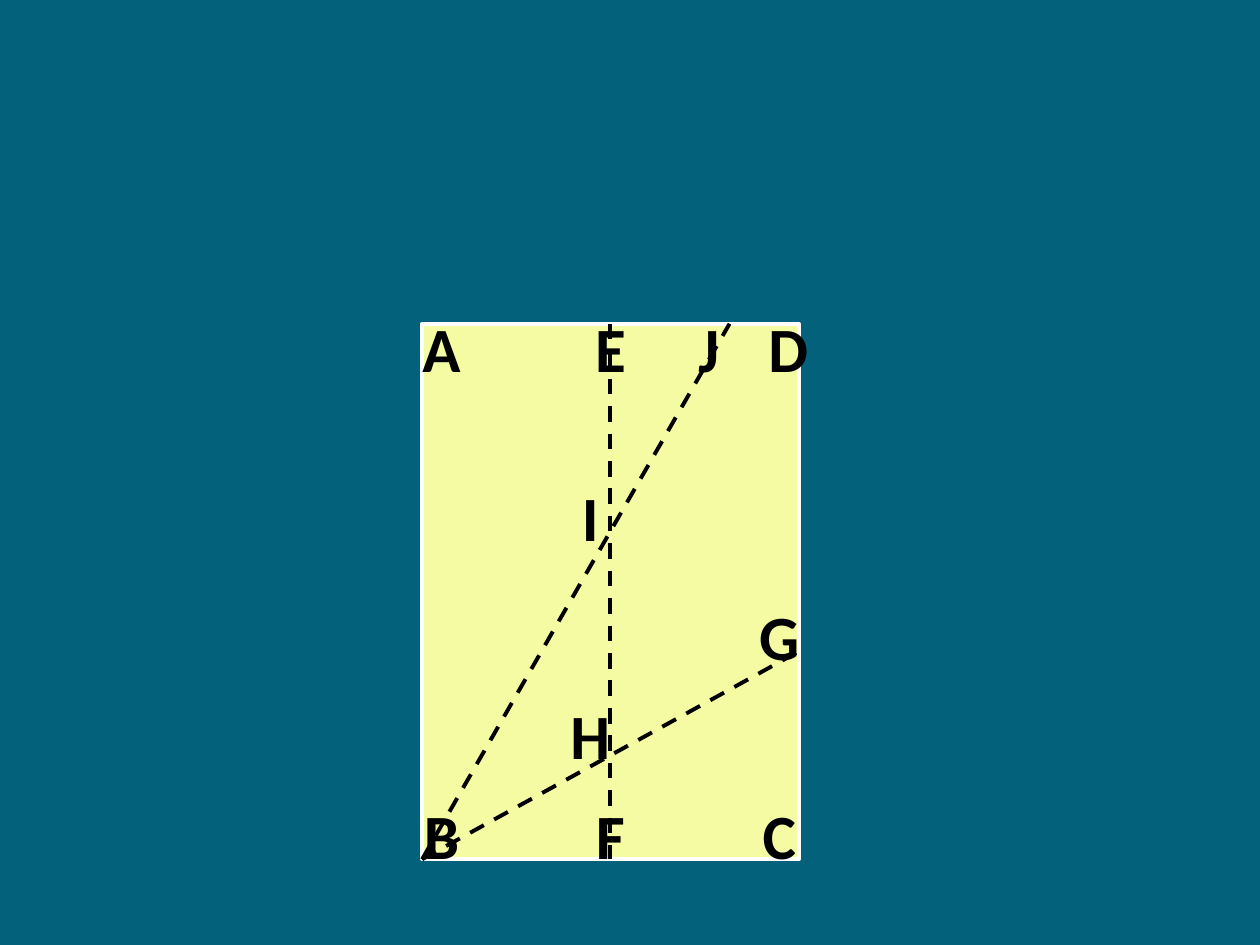
from typing import NamedTuple

from lxml import etree
from pptx import Presentation
from pptx import util as u
from pptx.dml.color import RGBColor
from pptx.enum import dml, shapes, text
from pptx.oxml.ns import qn

TEAL = RGBColor(0x04, 0x61, 0x7B)
PAPER = RGBColor(0xF5, 0xFB, 0xA3)
WHITE = RGBColor(0xFF, 0xFF, 0xFF)
BLACK = RGBColor(0x00, 0x00, 0x00)

LINE_WIDTH = u.Pt(2.25)
LABEL_FONT = {"name": "Calibri", "size": u.Pt(36), "bold": True}
LABEL_FRAME = {"word_wrap": True, "auto_size": text.MSO_AUTO_SIZE.SHAPE_TO_FIT_TEXT}
LABEL_WIDTH, LABEL_HEIGHT = 0.63, 0.71

# Sheet edges and label rows, in inches
LEFT, TOP, RIGHT, BOTTOM = 3.35, 2.57, 6.34, 6.82
MIDDLE = 4.84
TOP_ROW, BOTTOM_ROW = 2.41, 6.27


class Label(NamedTuple):
    letter: str
    left: float
    top: float


class Fold(NamedTuple):
    x1: float
    y1: float
    x2: float
    y2: float


LABELS = [
    Label("A", 3.19, TOP_ROW),
    Label("D", 5.94, TOP_ROW),
    Label("C", 5.87, BOTTOM_ROW),
    Label("B", 3.19, BOTTOM_ROW),
    Label("E", 4.53, TOP_ROW),
    Label("F", 4.53, BOTTOM_ROW),
    Label("H", 4.37, 5.48),
    Label("I", 4.37, 3.75),
    Label("G", 5.87, 4.69),
    Label("J", 5.31, TOP_ROW),
]
CENTRE_FOLD = Fold(MIDDLE, TOP, MIDDLE, BOTTOM)
CORNER_FOLDS = [Fold(LEFT, BOTTOM, RIGHT, 5.17), Fold(LEFT, BOTTOM, 5.79, TOP)]


def draw_sheet(page) -> None:
    sheet = page.shapes.add_shape(
        shapes.MSO_SHAPE.RECTANGLE,
        u.Inches(LEFT), u.Inches(TOP), u.Inches(RIGHT - LEFT), u.Inches(BOTTOM - TOP),
    )
    sheet.shadow.inherit = False
    sheet.fill.solid()
    sheet.fill.fore_color.rgb = PAPER
    sheet.line.color.rgb = WHITE
    sheet.line.width = LINE_WIDTH


def draw_fold(page, fold: Fold) -> None:
    line = page.shapes.add_connector(
        shapes.MSO_CONNECTOR.STRAIGHT, *(u.Inches(value) for value in fold)
    )
    line.line.color.rgb = BLACK
    line.line.width = LINE_WIDTH
    line.line.dash_style = dml.MSO_LINE.DASH
    etree.SubElement(line._element.spPr, qn("a:effectLst"))


def draw_label(page, label: Label) -> None:
    box = page.shapes.add_textbox(
        u.Inches(label.left), u.Inches(label.top),
        u.Inches(LABEL_WIDTH), u.Inches(LABEL_HEIGHT),
    )
    for name, value in LABEL_FRAME.items():
        setattr(box.text_frame, name, value)
    para = box.text_frame.paragraphs[0]
    para.alignment = text.PP_ALIGN.CENTER
    span = para.add_run()
    span.text = label.letter
    for name, value in LABEL_FONT.items():
        setattr(span.font, name, value)
    span.font.color.rgb = BLACK


def main() -> None:
    deck = Presentation()
    deck.slide_width, deck.slide_height = u.Inches(10), u.Inches(7.5)
    page = deck.slides.add_slide(deck.slide_layouts[6])
    page.background.fill.solid()
    page.background.fill.fore_color.rgb = TEAL

    # Sheet with its fold lines, then the point labels on top
    draw_sheet(page)
    for fold in [CENTRE_FOLD, *CORNER_FOLDS]:
        draw_fold(page, fold)
    for label in LABELS:
        draw_label(page, label)

    deck.save("out.pptx")


if __name__ == "__main__":
    main()
